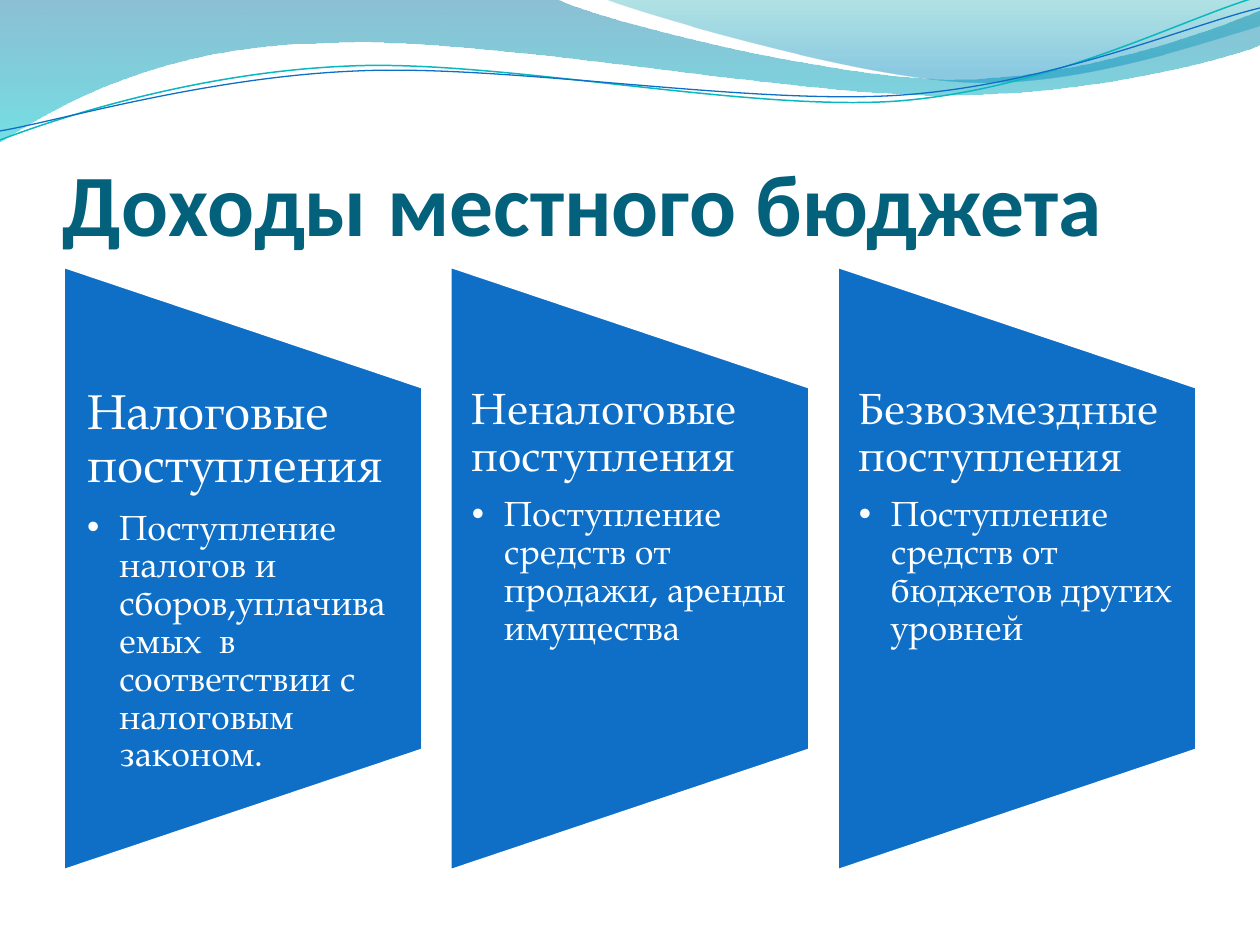
from lxml.etree import SubElement
from pptx import Presentation
from pptx.dml.color import RGBColor
from pptx.enum.shapes import MSO_SHAPE
from pptx.enum.text import MSO_ANCHOR
from pptx.oxml.ns import qn
from pptx.util import Pt

EMU_PER_PX = 914400 / 126
SLIDE_WIDTH, SLIDE_HEIGHT = 1260, 945
COLORS = {
    "title": "04617B", "panel": "0F6FC6", "white": "FFFFFF", "teal_line": "0AB8BF",
    "deep_blue": "0074A1", "aqua": "00C6CF", "teal": "00A1A9", "sky": "008BBF",
}
TITLE = "Доходы местного бюджета"
TITLE_FONT, BODY_FONT = "Calibri", "TeX Gyre Pagella"

# Heading, heading size, bullet, left and right inset
PANELS = [
    ("Налоговые поступления", 28,
     "Поступление налогов и сборов,уплачиваемых  в соответствии с налоговым законом.", (24, 24)),
    ("Неналоговые поступления", 25,
     "Поступление средств от продажи, аренды имущества", (22, 22)),
    ("Безвозмездные поступления", 25,
     "Поступление средств от бюджетов других уровней", (22, 22)),
]
PANEL_LEFT, PANEL_PITCH, PANEL_WIDTH = 63, 387, 360
PANEL_TOP, PANEL_HEIGHT = 266, 605
TEXT_TOP, TEXT_HEIGHT = 387, 363
BULLET_SIZE, BULLET_INDENT = 20, 32

# Outlines: a start point, then one point per straight line or three per Bézier curve
BANDS = [
    ([(-1, 0), [(556, -1)],
      [(600, 21), (837, 79), (955, 79)], [(1075, 79), (1207, 33), (1260, 11)],
      [(1261, 45)],
      [(1239, 55), (1096, 96), (940, 95)], [(784, 95), (481, 35), (324, 43)],
      [(163, 45), (58, 105), (-1, 142)]],
     [(0, "deep_blue", 45), (1, "aqua", 55)]),
    ([(604, -1),
      [(641, 14), (859, 78), (969, 82)], [(1079, 87), (1211, 40), (1260, 26)],
      [(1260, 0)]],
     [(0, "teal", 30), (0.8, "sky", 45)]),
]
WAVES = [
    ([(0, 140), [(60, 117), (199, 72), (349, 66)],
      [(498, 59), (747, 112), (898, 101)], [(1050, 89), (1182, 19), (1257, -3)]],
     "teal_line", 0.85),
    ([(0, 131), [(59, 121), (207, 77), (357, 71)],
      [(508, 64), (752, 106), (903, 95)], [(1053, 84), (1186, 26), (1260, 8)]],
     "panel", 0.75),
]


def px(value):
    return round(value * EMU_PER_PX)


def rgb(name):
    return RGBColor.from_string(COLORS[name])


def add_outline(slide, outline, close):
    """Build the outline from straight lines, then join each three into a curve."""
    start, *segments = outline
    builder = slide.shapes.build_freeform(px(start[0]), px(start[1]))
    points = [(px(x), px(y)) for segment in segments for x, y in segment]
    builder.add_line_segments(points, close=close)
    shape = builder.convert_to_shape()
    shape.shadow.inherit = False

    lines = iter(list(shape.element.iter(qn("a:lnTo"))))
    for segment in segments:
        first, *others = [next(lines) for _ in segment]
        if others:
            first.tag = qn("a:cubicBezTo")
        for line in others:
            first.append(line[0])
            line.getparent().remove(line)
    return shape


def add_band(slide, outline, stops):
    shape = add_outline(slide, outline, close=True)
    shape.line.fill.background()
    shape.fill.gradient()
    shape.fill.gradient_angle = 270
    for stop, (position, color, _) in zip(shape.fill.gradient_stops, stops):
        stop.position = position
        stop.color.rgb = rgb(color)
    color_elements = shape.element.spPr.iter(qn("a:srgbClr"))
    for element, (_, _, opacity) in zip(color_elements, stops):
        SubElement(element, qn("a:alpha"), val=str(opacity * 1000))


def add_wave(slide, outline, color, width):
    shape = add_outline(slide, outline, close=False)
    shape.fill.background()
    shape.line.color.rgb = rgb(color)
    shape.line.width = Pt(width)


def add_text_frame(slide, left, top, width, height, insets):
    box = slide.shapes.add_textbox(px(left), px(top), px(width), px(height))
    frame = box.text_frame
    frame.word_wrap = True
    frame.margin_left, frame.margin_top, frame.margin_right, frame.margin_bottom = map(px, insets)
    return frame


def write_text(paragraph, text, *, size, color="white", font=BODY_FONT, bold=False,
               line_spacing=None, space_after=0, bullet=False):
    run = paragraph.add_run()
    run.text = text
    run.font.size = Pt(size)
    run.font.name = font
    run.font.bold = bold
    run.font.color.rgb = rgb(color)
    paragraph.line_spacing = line_spacing
    paragraph.space_after = Pt(space_after)
    if bullet:
        paragraph.level = 1
        properties = paragraph._p.get_or_add_pPr()
        properties.set("marL", str(px(BULLET_INDENT)))
        properties.set("indent", str(-px(BULLET_INDENT)))
        SubElement(properties, qn("a:buFont"), typeface="Arial")
        SubElement(properties, qn("a:buChar"), char="•")


def add_panel(slide, left, heading, heading_size, bullet, side_insets):
    # The shape is turned by 270 degrees, so its own width is the height seen
    offset = (PANEL_HEIGHT - PANEL_WIDTH) / 2
    shape = slide.shapes.add_shape(
        MSO_SHAPE.FLOWCHART_MANUAL_OPERATION,
        px(left - offset), px(PANEL_TOP + offset), px(PANEL_HEIGHT), px(PANEL_WIDTH))
    shape.rotation = 270
    shape.shadow.inherit = False
    shape.fill.solid()
    shape.fill.fore_color.rgb = rgb("panel")
    shape.line.color.rgb = rgb("white")
    shape.line.width = Pt(2)

    inset_left, inset_right = side_insets
    frame = add_text_frame(slide, left, TEXT_TOP, PANEL_WIDTH, TEXT_HEIGHT,
                           (inset_left, 0, inset_right, 0))
    write_text(frame.paragraphs[0], heading, size=heading_size, line_spacing=0.9,
               space_after=heading_size * 0.35)
    write_text(frame.add_paragraph(), bullet, size=BULLET_SIZE, line_spacing=0.9,
               space_after=BULLET_SIZE * 0.15, bullet=True)


def main():
    presentation = Presentation()
    presentation.slide_width = px(SLIDE_WIDTH)
    presentation.slide_height = px(SLIDE_HEIGHT)
    slide = presentation.slides.add_slide(presentation.slide_layouts[6])

    for outline, stops in BANDS:
        add_band(slide, outline, stops)
    for outline, color, width in WAVES:
        add_wave(slide, outline, color, width)

    title_frame = add_text_frame(slide, 63, 96, 1134, 158, (0, 6, 0, 0))
    title_frame.vertical_anchor = MSO_ANCHOR.BOTTOM
    write_text(title_frame.paragraphs[0], TITLE, size=50, color="title",
               font=TITLE_FONT, bold=True)

    for index, panel in enumerate(PANELS):
        add_panel(slide, PANEL_LEFT + index * PANEL_PITCH, *panel)

    presentation.save("out.pptx")


if __name__ == "__main__":
    main()
